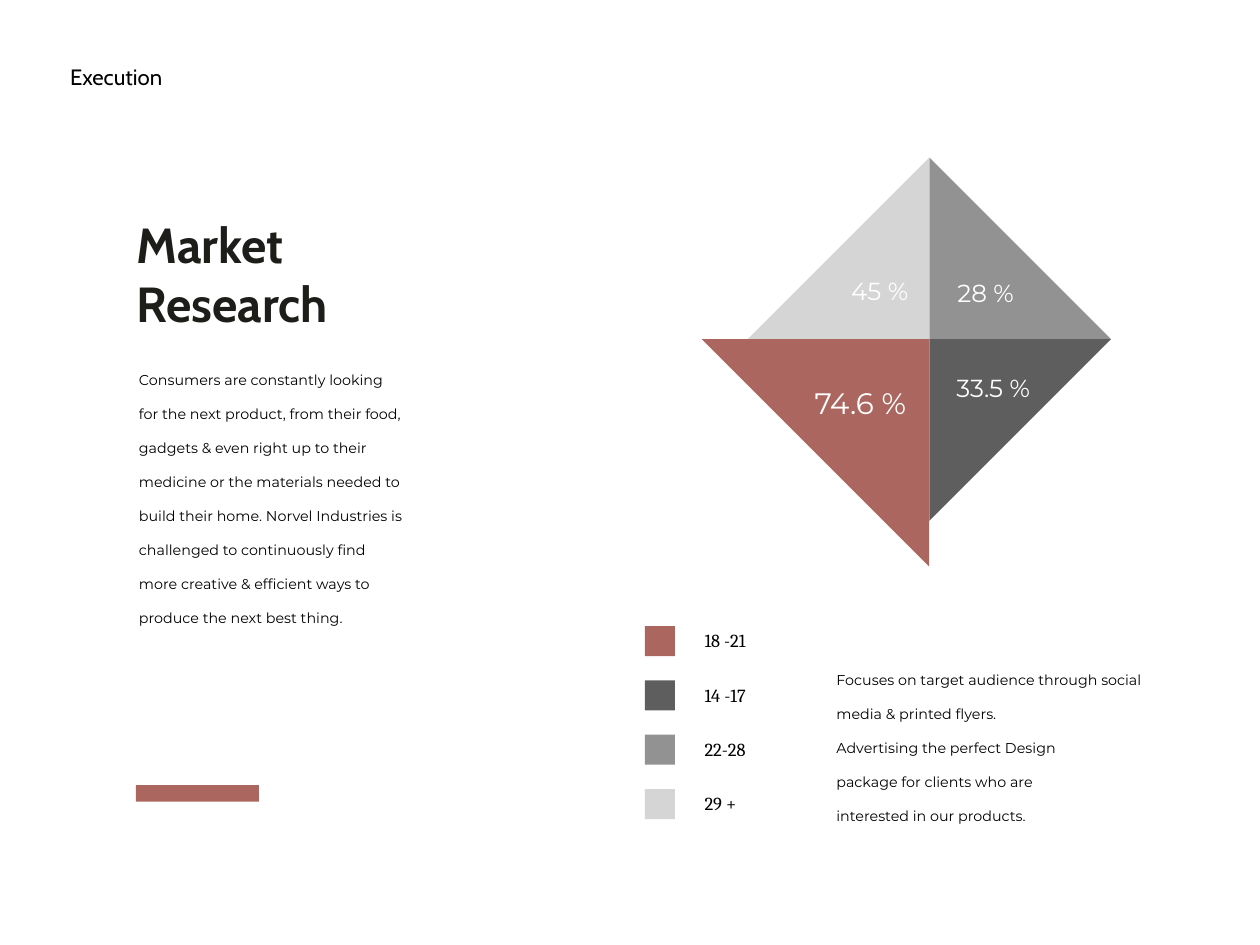
import pptx
import pptx.dml.color
import pptx.enum.shapes
import pptx.enum.text
import pptx.util

COLUMNS, ROWS = 128, 96
CELL = pptx.util.Inches(1 / 9)
ALIGN = pptx.enum.text.PP_ALIGN
ANCHOR = pptx.enum.text.MSO_ANCHOR
RED, DARK, MIDDLE, LIGHT = "AB675F", "5E5E5E", "929292", "D5D5D5"
BLACK, WHITE = "000000", "FFFFFF"

CENTRE = (94.4, 34.45)
WEDGES = [
    (1, -1, 18.45, MIDDLE),
    (1, 1, 18.45, DARK),
    (-1, -1, 18.45, LIGHT),
    (-1, 1, 23.1, RED),
]
SHARES = [
    ("74.6 %", (82.2, 38.8, 10.4, 4.15), 24),
    ("28 %", (96.75, 28, 6.75, 3.5), 20),
    ("45 %", (86, 27.8, 6.75, 3.5), 20),
    ("33.5 %", (96.5, 37.6, 8.8, 3.5), 20),
]
AGE_GROUPS = [("18 -21", RED), ("14 -17", DARK), ("22-28", MIDDLE), ("29 +", LIGHT)]
LEGEND_TOP, LEGEND_PITCH = 63.6, 5.52

RESEARCH = (
    "Consumers are constantly looking\v"
    "for the next product, from their food, gadgets & even right up to their\v"
    "medicine or the materials needed to\v"
    "build their home. Norvel Industries is challenged to continuously find\v"
    "more creative & efficient ways to\v"
    "produce the next best thing."
)
AUDIENCE = (
    "Focuses on target audience through social media & printed flyers.\v"
    "Advertising the perfect Design\v"
    "package for clients who are\v"
    "interested in our products."
)


def cells(*counts):
    """Turn counts of grid cells into lengths."""
    return [pptx.util.Emu(round(count * CELL)) for count in counts]


def paint(fill, color):
    """Give a fill one solid colour."""
    fill.solid()
    fill.fore_color.rgb = pptx.dml.color.RGBColor.from_string(color)


def write(shape, text, font, size, color=BLACK, bold=False, align=ALIGN.LEFT,
          anchor=ANCHOR.MIDDLE):
    """Fill a shape's text frame and format its runs."""
    frame = shape.text_frame
    frame.text = text
    frame.word_wrap = True
    frame.auto_size = pptx.enum.text.MSO_AUTO_SIZE.NONE
    frame.vertical_anchor = anchor
    frame.margin_left = frame.margin_right = pptx.util.Inches(0.03)
    frame.margin_top = frame.margin_bottom = pptx.util.Inches(0.03)
    for paragraph in frame.paragraphs:
        paragraph.alignment = align
        for run in paragraph.runs:
            run.font.name = font
            run.font.size = pptx.util.Pt(size)
            run.font.bold = bold
            paint(run.font.fill, color)


def add_label(slide, box, text, font, size, **style):
    """Add a text box on the grid."""
    shape = slide.shapes.add_textbox(*cells(*box))
    write(shape, text, font, size, **style)
    return shape


def add_body(slide, box, text):
    """Add a raised, widely spaced body text."""
    shape = add_label(slide, box, text, "Montserrat", 20, anchor=ANCHOR.TOP)
    for paragraph in shape.text_frame.paragraphs:
        paragraph.line_spacing = 1.15
        for run in paragraph.runs:
            run._r.get_or_add_rPr().set("baseline", "30000")


def finish(shape, color):
    """Make a shape flat, filled and without outline."""
    shape.shadow.inherit = False
    shape.line.fill.background()
    paint(shape.fill, color)


def add_block(slide, box, color):
    """Add a plain rectangle on the grid."""
    rectangle = pptx.enum.shapes.MSO_SHAPE.RECTANGLE
    finish(slide.shapes.add_shape(rectangle, *cells(*box)), color)


def add_wedge(slide, across, down, reach, color):
    """Add a right triangle with its right angle at the diamond's centre."""
    x, y = CENTRE
    builder = slide.shapes.build_freeform(*cells(x, y))
    tips = [cells(x + across * reach, y), cells(x, y + down * reach)]
    builder.add_line_segments(tips, close=True)
    finish(builder.convert_to_shape(), color)


def add_title(slide, box, text):
    """Move and format the title placeholder."""
    title = slide.shapes.title
    title.left, title.top, title.width, title.height = cells(*box)
    write(title, text, "Cabin", 40, color="1D1D1A", bold=True)


def add_legend(slide):
    """Add one swatch and one label for each age group."""
    for index, (ages, color) in enumerate(AGE_GROUPS):
        top = LEGEND_TOP + index * LEGEND_PITCH
        add_block(slide, (65.5, top, 3.05, 3.05), color)
        add_label(slide, (71.3, top, 12, 2.9), ages, "Cambria", 15)


def main():
    """Build the market research slide."""
    presentation = pptx.Presentation()
    presentation.slide_width, presentation.slide_height = cells(COLUMNS, ROWS)
    slide = presentation.slides.add_slide(presentation.slide_layouts[5])
    paint(slide.background.fill, WHITE)
    add_label(slide, (6.85, 6.2, 21.4, 3.25), "Execution", "Cabin", 18)
    add_title(slide, (13.6, 21.4, 24.75, 12.8), "Market\nResearch")
    add_body(slide, (13.85, 36.7, 32.3, 26.4), RESEARCH)
    add_block(slide, (13.8, 79.75, 12.5, 1.7), RED)
    for wedge in WEDGES:
        add_wedge(slide, *wedge)
    for text, box, size in SHARES:
        add_label(slide, box, text, "Montserrat", size, color=WHITE, align=ALIGN.CENTER)
    add_legend(slide)
    add_body(slide, (84.7, 67.2, 32.3, 16.65), AUDIENCE)
    presentation.save("out.pptx")


if __name__ == "__main__":
    main()
